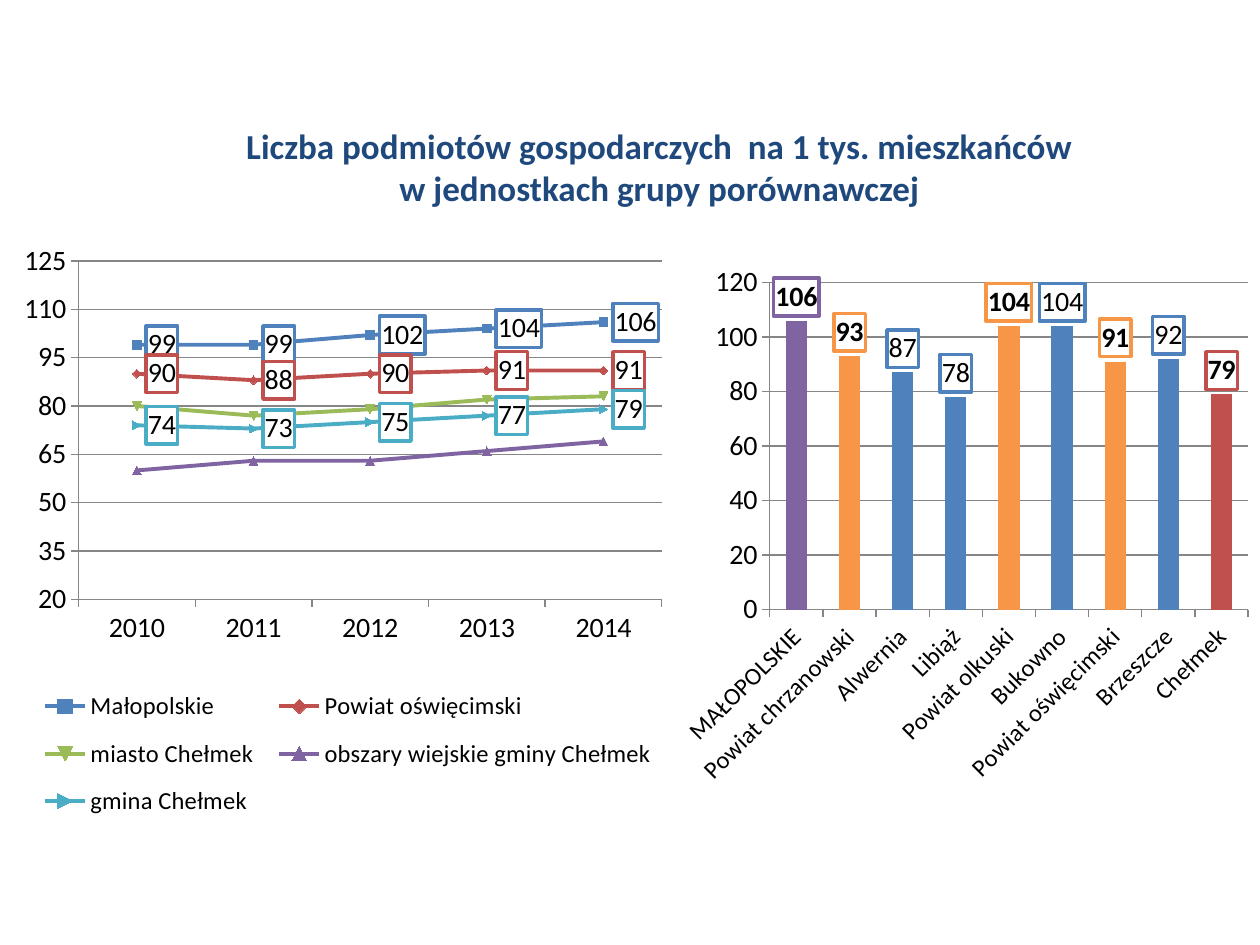
"""Build a slide comparing business density in a group of Polish municipalities."""
from dataclasses import dataclass

from lxml import etree
from pptx import Presentation
from pptx import util as u
from pptx.chart import data as chart_data
from pptx.dml.color import RGBColor
from pptx.enum import chart as ch
from pptx.enum import text
from pptx.oxml import parse_xml
from pptx.oxml.ns import nsdecls, qn


@dataclass(frozen=True)
class Theme:
    font: str = "Calibri"
    title: str = "1F497D"
    ink: str = "000000"
    grid: str = "868686"
    blue: str = "4F81BD"
    red: str = "C0504D"
    green: str = "9BBB59"
    purple: str = "8064A2"
    teal: str = "4BACC6"
    orange: str = "F79646"
    title_size: int = 20
    chart_size: int = 16
    small_size: int = 14


THEME = Theme()

TITLE = ("Liczba podmiotów gospodarczych  na 1 tys. mieszkańców\n"
         "w jednostkach grupy porównawczej")
YEARS = ["2010", "2011", "2012", "2013", "2014"]
TRENDS = [
    ("Małopolskie", (99, 99, 102, 104, 106), THEME.blue, True),
    ("Powiat oświęcimski", (90, 88, 90, 91, 91), THEME.red, True),
    ("miasto Chełmek", (80, 77, 79, 82, 83), THEME.green, False),
    ("obszary wiejskie gminy Chełmek", (60, 63, 63, 66, 69), THEME.purple, False),
    ("gmina Chełmek", (74, 73, 75, 77, 79), THEME.teal, True),
]
UNITS = [
    ("MAŁOPOLSKIE", 106, THEME.purple),
    ("Powiat chrzanowski", 93, THEME.orange),
    ("Alwernia", 87, THEME.blue),
    ("Libiąż", 78, THEME.blue),
    ("Powiat olkuski", 104, THEME.orange),
    ("Bukowno", 104, THEME.blue),
    ("Powiat oświęcimski", 91, THEME.orange),
    ("Brzeszcze", 92, THEME.blue),
    ("Chełmek", 79, THEME.red),
]


def format_font(font, size, color=THEME.ink, bold=False):
    """Apply the theme font with a size, colour and weight."""
    font.name = THEME.font
    font.size = u.Pt(size)
    font.bold = bold
    font.color.rgb = RGBColor.from_string(color)


def add_title(slide):
    """Place and format the two-line title."""
    title = slide.shapes.title
    title.left, title.top, title.width, title.height = map(u.Pt, (84, 67.5, 585.5, 55.5))
    frame = title.text_frame
    frame.text = TITLE
    frame.word_wrap = True
    frame.vertical_anchor = text.MSO_ANCHOR.TOP
    for paragraph in frame.paragraphs:
        paragraph.alignment = text.PP_ALIGN.CENTER
        for run in paragraph.runs:
            format_font(run.font, THEME.title_size, THEME.title, True)


def manual_layout(x, y, width, height, inner=False):
    """Return a layout element measured in fractions of the chart."""
    layout = parse_xml(f"<c:layout {nsdecls('c')}><c:manualLayout/></c:layout>")
    settings = [("layoutTarget", "inner")] if inner else []
    settings += [("xMode", "edge"), ("yMode", "edge"),
                 ("x", x), ("y", y), ("w", width), ("h", height)]
    for name, value in settings:
        etree.SubElement(layout[0], qn(f"c:{name}")).set("val", str(value))
    return layout


def set_plot_area(chart, *fractions):
    """Fix the inner plot area of a chart."""
    plot_area = chart._chartSpace.chart.plotArea
    for layout in plot_area.findall(qn("c:layout")):
        plot_area.remove(layout)
    plot_area.insert(0, manual_layout(*fractions, inner=True))


def box_label(label, color):
    """Give a label element a white fill and a coloured border."""
    for properties in label.findall(qn("c:spPr")):
        label.remove(properties)
    label.find(qn("c:txPr")).addprevious(parse_xml(
        f"<c:spPr {nsdecls('c', 'a')}>"
        '<a:solidFill><a:srgbClr val="FFFFFF"/></a:solidFill>'
        f'<a:ln w="{u.Pt(2)}"><a:solidFill><a:srgbClr val="{color}"/></a:solidFill></a:ln>'
        "</c:spPr>"))


def label_series(series, color, position):
    """Show boxed values on every point of a series."""
    labels = series.data_labels
    labels.show_value = True
    labels.number_format = "0"
    labels.number_format_is_linked = False
    labels.position = position
    format_font(labels.font, THEME.chart_size)
    box_label(labels._element, color)


def format_axes(chart, low, high, step):
    """Set the value scale, ticks, gridlines and axis lines."""
    values = chart.value_axis
    values.minimum_scale, values.maximum_scale, values.major_unit = low, high, step
    values.tick_labels.number_format = "0"
    values.tick_labels.number_format_is_linked = False
    values.has_major_gridlines = True
    for axis in (values, chart.category_axis):
        axis.major_tick_mark = ch.XL_TICK_MARK.OUTSIDE
        axis.minor_tick_mark = ch.XL_TICK_MARK.NONE
    for part in (values, chart.category_axis, values.major_gridlines):
        part.format.line.color.rgb = RGBColor.from_string(THEME.grid)
        part.format.line.width = u.Pt(0.75)


def add_chart(slide, kind, box, categories, series):
    """Add an untitled chart with the theme font."""
    data = chart_data.CategoryChartData(number_format="0")
    data.categories = categories
    for name, values in series:
        data.add_series(name, values)
    chart = slide.shapes.add_chart(kind, *map(u.Pt, box), data).chart
    chart.has_title = False
    chart.has_legend = False
    format_font(chart.font, THEME.chart_size)
    return chart


def add_trend_chart(slide):
    """Add the line chart of yearly values with its legend."""
    chart = add_chart(slide, ch.XL_CHART_TYPE.LINE_MARKERS, (0, 134.5, 394, 348.5),
                      YEARS, [trend[:2] for trend in TRENDS])
    set_plot_area(chart, 0.114, 0.042, 0.846, 0.555)
    format_axes(chart, 20, 125, 15)
    for series, (_, _, color, labelled) in zip(chart.plots[0].series, TRENDS):
        series.smooth = False
        series.format.line.color.rgb = RGBColor.from_string(color)
        series.format.line.width = u.Pt(2.25)
        series.marker.size = 5
        series.marker.format.fill.solid()
        series.marker.format.fill.fore_color.rgb = RGBColor.from_string(color)
        series.marker.format.line.color.rgb = RGBColor.from_string(color)
        if labelled:
            label_series(series, color, ch.XL_LABEL_POSITION.RIGHT)
    chart.has_legend = True
    legend = chart.legend
    legend.position = ch.XL_LEGEND_POSITION.RIGHT
    legend.include_in_layout = False
    format_font(legend.font, THEME.small_size)
    for layout in legend._element.findall(qn("c:layout")):
        legend._element.remove(layout)
    legend._element.find(qn("c:legendPos")).addnext(manual_layout(0.04, 0.72, 0.93, 0.26))


def add_unit_chart(slide):
    """Add the column chart of units with highlighted columns."""
    names, values, colors = zip(*UNITS)
    chart = add_chart(slide, ch.XL_CHART_TYPE.COLUMN_CLUSTERED, (382.5, 146, 337.5, 309.5),
                      names, [("Series 1", values)])
    set_plot_area(chart, 0.17, 0.05, 0.81, 0.604)
    format_axes(chart, 0, 120, 20)
    tick_labels = chart.category_axis.tick_labels
    format_font(tick_labels.font, THEME.small_size)
    body = chart.category_axis._element.find(qn("c:txPr")).find(qn("a:bodyPr"))
    body.set("rot", str(-45 * 60000))
    plot = chart.plots[0]
    plot.vary_by_categories = False
    plot.gap_width = 150
    series = plot.series[0]
    series.format.fill.solid()
    series.format.fill.fore_color.rgb = RGBColor.from_string(THEME.blue)
    label_series(series, THEME.blue, ch.XL_LABEL_POSITION.OUTSIDE_END)
    highlights = [(i, color) for i, color in enumerate(colors) if color != THEME.blue]
    for index, color in highlights:
        point = series.points[index]
        point.format.fill.solid()
        point.format.fill.fore_color.rgb = RGBColor.from_string(color)
        format_font(point.data_label.font, THEME.chart_size, bold=True)
        point.data_label.position = ch.XL_LABEL_POSITION.OUTSIDE_END
    labels = series.data_labels._element.findall(qn("c:dLbl"))
    for label, (_, color) in zip(labels, highlights):
        box_label(label, color)


def main():
    """Build and save the presentation."""
    presentation = Presentation()
    presentation.slide_width, presentation.slide_height = u.Pt(720), u.Pt(540)
    slide = presentation.slides.add_slide(presentation.slide_layouts[5])
    add_trend_chart(slide)
    add_title(slide)
    add_unit_chart(slide)
    presentation.save("out.pptx")


if __name__ == "__main__":
    main()
